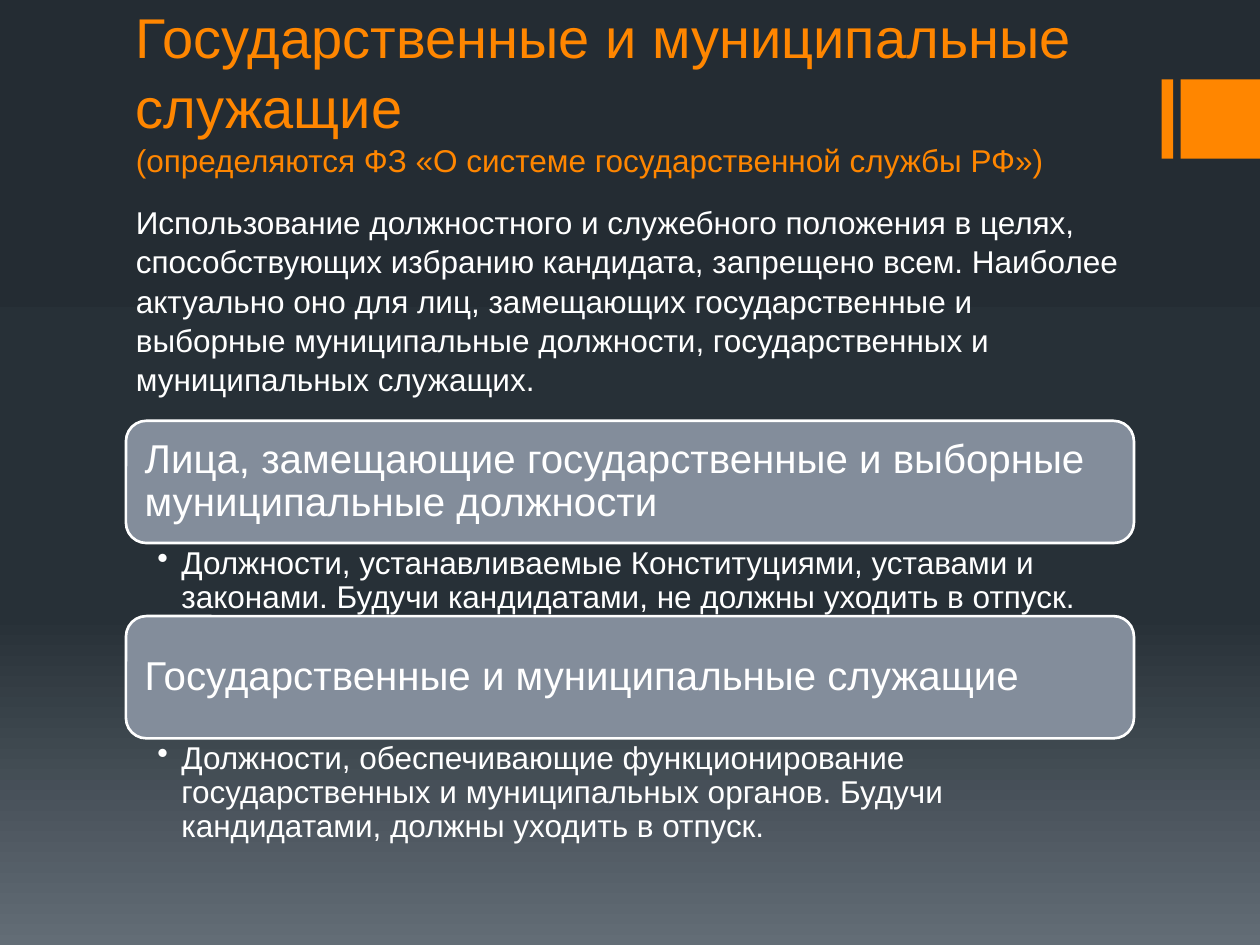
from lxml import etree
from pptx import Presentation
from pptx import util as u
from pptx.dml.color import RGBColor
from pptx.enum import shapes, text
from pptx.oxml.ns import qn

ORANGE = RGBColor(0xFF, 0x86, 0x00)
WHITE = RGBColor(0xFF, 0xFF, 0xFF)
SLATE = RGBColor(0x83, 0x8D, 0x9B)
BACKDROP = [(0, "242C33"), (65, "273037"), (100, "636D76")]

deck = Presentation()
deck.slide_width, deck.slide_height = u.Inches(10), u.Inches(7.5)
slide = deck.slides.add_slide(deck.slide_layouts[6])


def write(words, box, size=18, color=WHITE, anchor=text.MSO_ANCHOR.TOP,
          insets=(0.1, 0.05, 0.1, 0.05), spacing=1.04, bullet=False):
    """Add a text box (left, top, width, height in inches); return its paragraph."""
    frame = slide.shapes.add_textbox(*map(u.Inches, box)).text_frame
    frame.word_wrap = True
    frame.vertical_anchor = anchor
    (frame.margin_left, frame.margin_top,
     frame.margin_right, frame.margin_bottom) = map(u.Inches, insets)
    para = frame.paragraphs[0]
    para.text = words
    para.line_spacing = spacing
    if bullet:
        props = para._p.get_or_add_pPr()
        props.set("marL", str(u.Inches(0.19)))
        props.set("indent", str(u.Inches(-0.19)))
        etree.SubElement(props, qn("a:buChar")).set("char", "•")
    for run in para.runs:
        run.font.name = "Arial"
        run.font.size = u.Pt(size)
        run.font.color.rgb = color
    return para


def block(kind, box, fill):
    shape = slide.shapes.add_shape(kind, *map(u.Inches, box))
    shape.shadow.inherit = False
    shape.fill.solid()
    shape.fill.fore_color.rgb = fill
    shape.line.fill.background()
    return shape


# Background gradient, top to bottom
backdrop = slide.background.fill
backdrop.gradient()
backdrop.gradient_angle = 270
stops = next(slide._element.iter(qn("a:gsLst")))
for stop in list(stops):
    stops.remove(stop)
for percent, shade in BACKDROP:
    stop = etree.SubElement(stops, qn("a:gs"), pos=str(percent * 1000))
    etree.SubElement(stop, qn("a:srgbClr"), val=shade)

# Accent marks at the right edge
for left, width in [(9.22, 0.09), (9.37, 0.63)]:
    block(shapes.MSO_SHAPE.RECTANGLE, (left, 0.63, width, 0.63), ORANGE)

title = write("Государственные и муниципальные служащие\v"
              "(определяются ФЗ «О системе государственной службы РФ»)",
              (0.98, 0.21, 8, 1.26), size=32, color=ORANGE,
              anchor=text.MSO_ANCHOR.BOTTOM)
title.runs[1].font.size = u.Pt(18)

write("Использование должностного и служебного положения в целях, "
      "способствующих избранию кандидата, запрещено всем. Наиболее актуально "
      "оно для лиц, замещающих государственные и выборные муниципальные "
      "должности, государственных и муниципальных служащих.",
      (0.98, 1.55, 8.03, 1.62))

# Stacked categories: a rounded heading with its explanation beneath
CATEGORIES = [
    ("Лица, замещающие государственные и выборные муниципальные должности",
     "Должности, устанавливаемые Конституциями, уставами и законами. "
     "Будучи кандидатами, не должны уходить в отпуск.", 0.58),
    ("Государственные и муниципальные служащие",
     "Должности, обеспечивающие функционирование государственных и "
     "муниципальных органов. Будучи кандидатами, должны уходить в отпуск.", 0.86),
]
LEFT, WIDTH, HEADING, PAD = 1, 8, 0.97, 0.05
top = 3.34
for heading, detail, detail_height in CATEGORIES:
    panel = block(shapes.MSO_SHAPE.ROUNDED_RECTANGLE,
                  (LEFT, top, WIDTH, HEADING), SLATE)
    panel.line.color.rgb = WHITE
    panel.line.width = u.Pt(1.5)
    write(heading, (LEFT + PAD, top + PAD, WIDTH - 2 * PAD, HEADING - 2 * PAD),
          size=23, anchor=text.MSO_ANCHOR.MIDDLE, insets=[0.1] * 4, spacing=0.9)
    top += HEADING
    write(detail, (LEFT, top, WIDTH, detail_height),
          insets=(0.25, 0.03, 0.18, 0.03), spacing=0.9, bullet=True)
    top += detail_height

deck.save("out.pptx")
